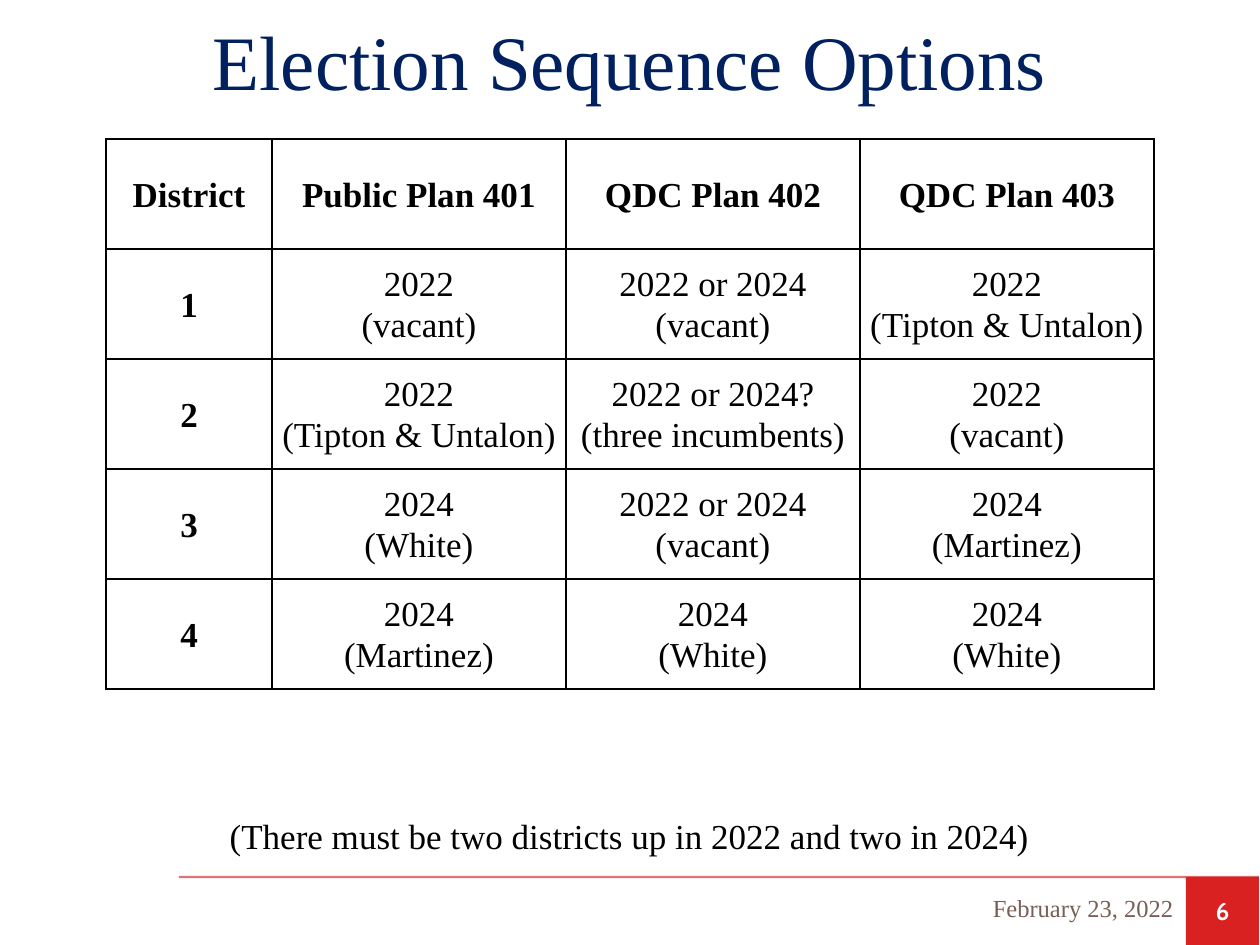
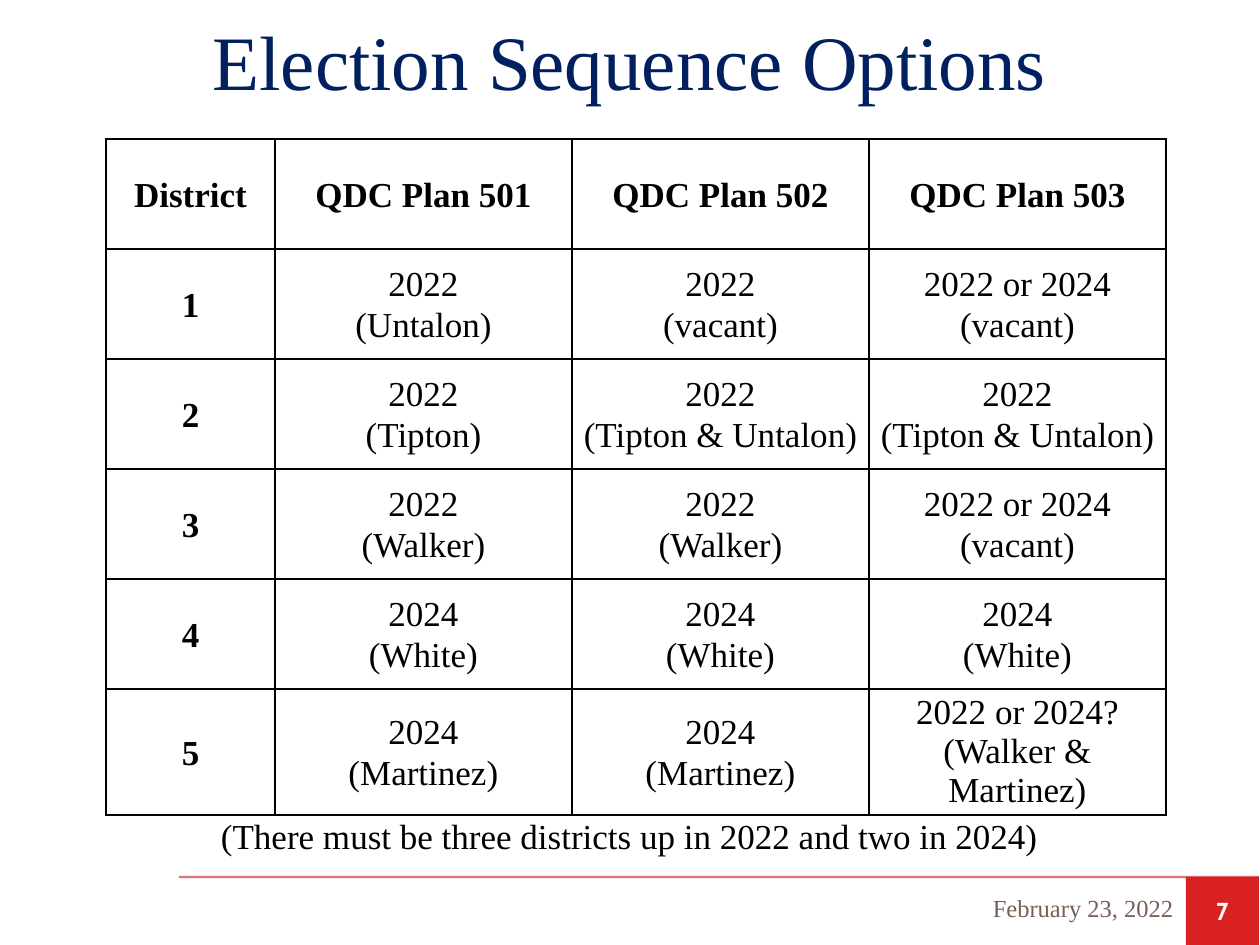
"""Build two slides that compare election sequence options by district plan."""
from lxml import etree
from pptx import Presentation
from pptx.dml.color import RGBColor
from pptx.enum.shapes import MSO_CONNECTOR, MSO_SHAPE
from pptx.enum.text import MSO_ANCHOR as ANCHOR, MSO_AUTO_SIZE, PP_ALIGN as ALIGN
from pptx.oxml import parse_xml
from pptx.oxml.ns import nsdecls, qn
from pptx.util import Pt

PX = 914400 / 126
NAVY = RGBColor(0x00, 0x20, 0x60)
BLACK = RGBColor(0x00, 0x00, 0x00)
WHITE = RGBColor(0xFF, 0xFF, 0xFF)
RED = RGBColor(0xD9, 0x21, 0x21)
RULE_RED = RGBColor(0xC8, 0x00, 0x00)
BROWN = RGBColor(0x77, 0x5F, 0x55)

SERIF = "Times New Roman"
TITLE_FONT = {"name": SERIF, "size": Pt(44), "bold": False}
BODY_FONT = {"name": SERIF, "size": Pt(20), "bold": False}
HEAD_FONT = {**BODY_FONT, "bold": True}
DATE_FONT = {"name": SERIF, "size": Pt(14), "bold": False}
NUMBER_FONT = {"name": "Cabin", "size": Pt(14), "bold": True}

TABLE_LEFT, TABLE_TOP, ROW_HEIGHT = 106, 139, 110
LINE_SPACING, WRAPPED_SPACING = 1.07, 1.0
WRAPPED_ENTRY = "2022 or 2024?\n(Walker & Martinez)"

OPTIONS = [
    {
        "number": "6",
        "widths": [166, 294, 294, 294],
        "note": "(There must be two districts up in 2022 and two in 2024)",
        "rows": [
            ["District", "Public Plan 401", "QDC Plan 402", "QDC Plan 403"],
            ["1", "2022\n(vacant)", "2022 or 2024\n(vacant)", "2022\n(Tipton & Untalon)"],
            ["2", "2022\n(Tipton & Untalon)", "2022 or 2024?\n(three incumbents)", "2022\n(vacant)"],
            ["3", "2024\n(White)", "2022 or 2024\n(vacant)", "2024\n(Martinez)"],
            ["4", "2024\n(Martinez)", "2024\n(White)", "2024\n(White)"],
        ],
    },
    {
        "number": "7",
        "widths": [169, 297, 297, 297],
        "note": "(There must be three districts up in 2022 and two in 2024)",
        "rows": [
            ["District", "QDC Plan 501", "QDC Plan 502", "QDC Plan 503"],
            ["1", "2022\n(Untalon)", "2022\n(vacant)", "2022 or 2024\n(vacant)"],
            ["2", "2022\n(Tipton)", "2022\n(Tipton & Untalon)", "2022\n(Tipton & Untalon)"],
            ["3", "2022\n(Walker)", "2022\n(Walker)", "2022 or 2024\n(vacant)"],
            ["4", "2024\n(White)", "2024\n(White)", "2024\n(White)"],
            ["5", "2024\n(Martinez)", "2024\n(Martinez)", WRAPPED_ENTRY],
        ],
    },
]


def px(*lengths):
    return [round(length * PX) for length in lengths]


def write(frame, text, font, color, align=ALIGN.CENTER, spacing=None):
    frame.text = text
    frame.word_wrap = True
    frame.vertical_anchor = ANCHOR.MIDDLE
    for paragraph in frame.paragraphs:
        paragraph.alignment = align
        paragraph.line_spacing = spacing
        for key, value in font.items():
            setattr(paragraph.font, key, value)
        paragraph.font.color.rgb = color


prs = Presentation()
prs.slide_width, prs.slide_height = px(1260, 945)

for option in OPTIONS:
    slide = prs.slides.add_slide(prs.slide_layouts[5])
    shapes = slide.shapes

    footer_rule = shapes.add_connector(MSO_CONNECTOR.STRAIGHT, *px(179, 877, 1259, 877))
    footer_rule.line.color.rgb = RULE_RED
    footer_rule.line.width = Pt(1.25)
    rule_color = footer_rule.line.fill._xPr.find(".//" + qn("a:srgbClr"))
    etree.SubElement(rule_color, qn("a:alpha")).set("val", "55000")
    etree.SubElement(footer_rule._element.spPr, qn("a:effectLst"))

    number_badge = shapes.add_shape(MSO_SHAPE.RECTANGLE, *px(1186, 877, 73, 68))
    number_badge.shadow.inherit = False
    number_badge.fill.solid()
    number_badge.fill.fore_color.rgb = RED
    number_badge.line.fill.background()
    write(number_badge.text_frame, option["number"], NUMBER_FONT, WHITE)

    meeting_date = shapes.add_textbox(*px(818, 883, 368, 50))
    write(meeting_date.text_frame, "February 23, 2022", DATE_FONT, BROWN, ALIGN.RIGHT)

    title = shapes.title
    title.left, title.top, title.width, title.height = px(1, 0, 1258, 120)
    write(title.text_frame, "Election Sequence Options", TITLE_FONT, NAVY)
    title.text_frame.auto_size = MSO_AUTO_SIZE.NONE

    rows, widths = option["rows"], option["widths"]
    plans = shapes.add_table(
        len(rows), len(widths),
        *px(TABLE_LEFT, TABLE_TOP, sum(widths), ROW_HEIGHT * len(rows))).table
    plans.first_row = plans.horz_banding = False
    for column, width in zip(plans.columns, px(*widths)):
        column.width = width
    for row_index, row in enumerate(rows):
        plans.rows[row_index].height = px(ROW_HEIGHT)[0]
        for column_index, entry in enumerate(row):
            cell = plans.cell(row_index, column_index)
            heading = row_index == 0 or column_index == 0
            spacing = WRAPPED_SPACING if entry == WRAPPED_ENTRY else LINE_SPACING
            write(cell.text_frame, entry, HEAD_FONT if heading else BODY_FONT, BLACK, spacing=spacing)
            cell.vertical_anchor = ANCHOR.MIDDLE
            cell.margin_left, cell.margin_top, cell.margin_right, cell.margin_bottom = px(9, 0, 9, 0)
            cell.fill.background()
            cell_props = cell._tc.get_or_add_tcPr()
            for position, side in enumerate(("lnL", "lnR", "lnT", "lnB")):
                cell_props.insert(position, parse_xml(
                    f'<a:{side} {nsdecls("a")} w="{Pt(1)}"><a:solidFill>'
                    f'<a:srgbClr val="{BLACK}"/></a:solidFill></a:{side}>'))

    district_note = shapes.add_textbox(*px(89, 808, 1081, 55))
    write(district_note.text_frame, option["note"], BODY_FONT, BLACK)

prs.save("out.pptx")
